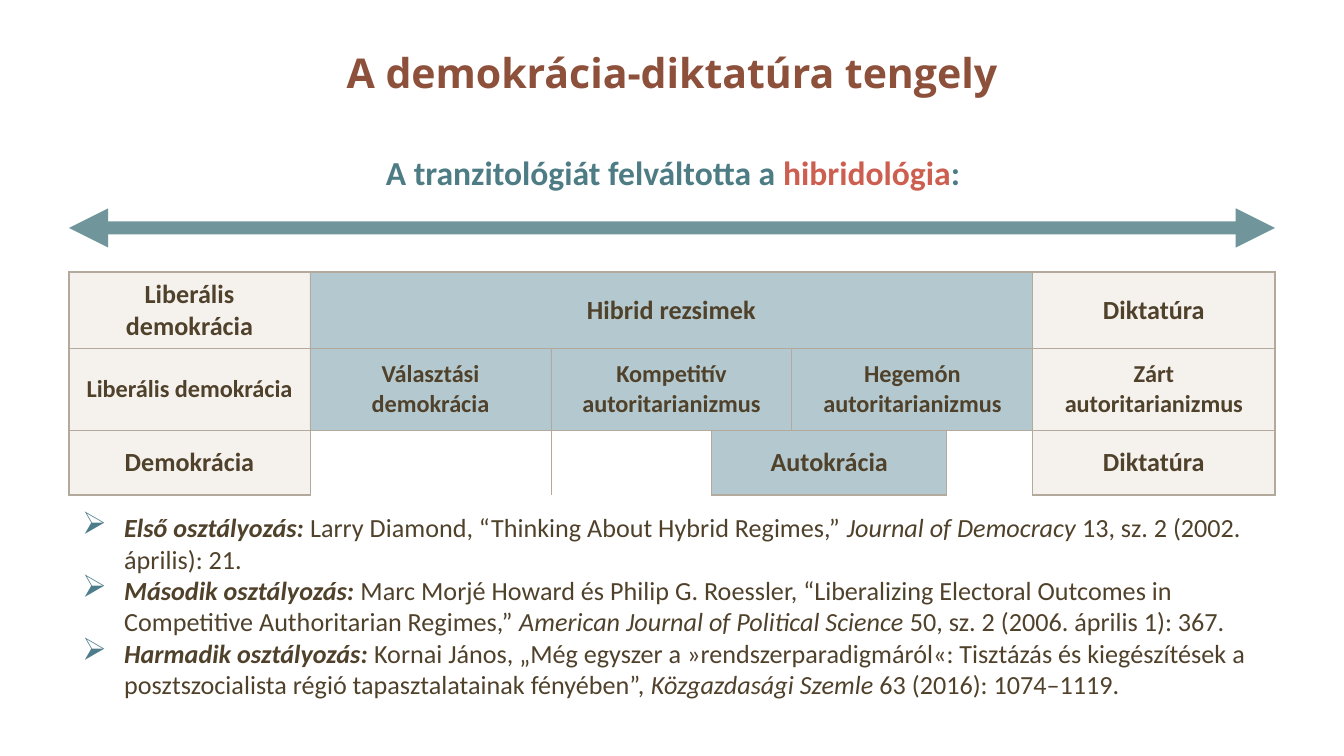
from lxml import etree
from pptx import Presentation, util as u
from pptx.dml.color import RGBColor
from pptx.enum import shapes, text
from pptx.oxml import ns

PX = 914400 / 134.4
BROWN, TEAL, RED, DARK = "8D503B", "4D7C84", "CD5F50", "50412B"
SAND, BLUE, BORDER, BULLET = "EFEAE4", "6B95A1", "B3A99D", "4D7C8B"
NO_STYLE = "{2D5ABB26-0587-4C30-8999-92F81FD0307C}"

COLS = [241, 241, 161, 80, 155, 86, 242]
ROWS = [69, 82, 65]
# row, column, columns spanned, wording, size, fill, opacity
REGIMES = [
    (0, 0, 1, "Liberális demokrácia", 14, SAND, 60),
    (0, 1, 5, "Hibrid rezsimek", 14, BLUE, 50),
    (0, 6, 1, "Diktatúra", 14, SAND, 60),
    (1, 0, 1, "Liberális demokrácia", 13, SAND, 60),
    (1, 1, 1, "Választási demokrácia", 13, BLUE, 50),
    (1, 2, 2, "Kompetitív autoritarianizmus", 13, BLUE, 50),
    (1, 4, 2, "Hegemón autoritarianizmus", 13, BLUE, 50),
    (1, 6, 1, "Zárt autoritarianizmus", 13, SAND, 60),
    (2, 0, 1, "Demokrácia", 14, SAND, 60),
    (2, 3, 2, "Autokrácia", 14, BLUE, 50),
    (2, 6, 1, "Diktatúra", 14, SAND, 60),
]
GAPS = [(2, 1, "LT"), (2, 2, "RT"), (2, 5, "LRT")]
# lead-in, citation, journal, issue
SOURCES = [
    ("Első osztályozás: ", "Larry Diamond, “Thinking About Hybrid Regimes,” ",
     "Journal of Democracy ", "13, sz. 2 (2002. április): 21."),
    ("Második osztályozás:",
     " Marc Morjé Howard és Philip G. Roessler, “Liberalizing Electoral Outcomes "
     "in Competitive Authoritarian Regimes,” ",
     "American Journal of Political Science ", "50, sz. 2 (2006. április 1): 367."),
    ("Harmadik osztályozás:",
     " Kornai János, „Még egyszer a »rendszerparadigmáról«: Tisztázás és "
     "kiegészítések a posztszocialista régió tapasztalatainak fényében”, ",
     "Közgazdasági Szemle ", "63 (2016): 1074–1119."),
]


def px(n):
    return u.Emu(round(n * PX))


def rgb(value):
    return RGBColor.from_string(value)


def add(parent, tag, **attrs):
    """Append an element of the drawing namespace."""
    return etree.SubElement(parent, ns.qn("a:" + tag), attrs)


def set_alpha(fill, percent):
    color = fill._xPr.find(".//" + ns.qn("a:srgbClr"))
    add(color, "alpha", val=str(percent * 1000))


def style(p, size, color, name="Calibri", bold=None):
    p.font.size, p.font.name, p.font.bold = u.Pt(size), name, bold
    p.font.color.rgb = rgb(color)


def add_text_frame(s, x, y, w, h):
    tf = s.shapes.add_textbox(px(x), px(y), px(w), px(h)).text_frame
    tf.word_wrap = True
    return tf


def add_title(s, x, y, w, h):
    tf = add_text_frame(s, x, y, w, h)
    tf.vertical_anchor = text.MSO_ANCHOR.MIDDLE
    p = tf.paragraphs[0]
    p.text, p.alignment = "A demokrácia-diktatúra tengely", text.PP_ALIGN.CENTER
    style(p, 22, BROWN, "Open Sans", True)


def add_subtitle(s, x, y, w, h):
    p = add_text_frame(s, x, y, w, h).paragraphs[0]
    p.alignment = text.PP_ALIGN.CENTER
    style(p, 18, TEAL, bold=True)
    for words, color in [("A tranzitológiát felváltotta a ", TEAL),
                         ("hibridológia", RED), (":", TEAL)]:
        r = p.add_run()
        r.text = words
        r.font.color.rgb = rgb(color)


def add_axis(s, x, y, w):
    """Draw the thick two-headed arrow."""
    c = s.shapes.add_connector(shapes.MSO_CONNECTOR.STRAIGHT,
                               px(x), px(y), px(x + w), px(y))
    c.line.width = u.Pt(7)
    c.line.color.rgb = rgb(TEAL)
    set_alpha(c.line.fill, 80)
    ln = c.line._get_or_add_ln()
    add(ln, "headEnd", type="triangle")
    add(ln, "tailEnd", type="triangle")
    add(c._element.spPr, "effectLst")


def set_borders(cell, widths):
    """Put borders, given as side to points, ahead of the cell's fill."""
    tc_pr = cell._tc.get_or_add_tcPr()
    for i, (side, points) in enumerate(widths.items()):
        ln = add(tc_pr, "ln" + side, w=str(u.Pt(points)))
        add(add(ln, "solidFill"), "srgbClr", val=BORDER)
        tc_pr.insert(i, ln)


def add_regime_table(s, x, y):
    frame = s.shapes.add_table(len(ROWS), len(COLS), px(x), px(y),
                               px(sum(COLS)), px(sum(ROWS)))
    table = frame.table
    table._tbl.tblPr.find(ns.qn("a:tableStyleId")).text = NO_STYLE
    table.first_row = table.horz_banding = False
    for column, w in zip(table.columns, COLS):
        column.width = px(w)
    for row, h in zip(table.rows, ROWS):
        row.height = px(h)

    for r, c, span, words, size, color, opacity in REGIMES:
        cell = table.cell(r, c)
        if span > 1:
            cell.merge(table.cell(r, c + span - 1))
        cell.vertical_anchor = text.MSO_ANCHOR.MIDDLE
        cell.fill.solid()
        cell.fill.fore_color.rgb = rgb(color)
        set_alpha(cell.fill, opacity)
        outer = {"L": c == 0, "R": c + span == len(COLS),
                 "T": r == 0, "B": r == len(ROWS) - 1}
        set_borders(cell, {side: 1 if edge else 0.5 for side, edge in outer.items()})
        p = cell.text_frame.paragraphs[0]
        p.text, p.alignment = words, text.PP_ALIGN.CENTER
        style(p, size, DARK, bold=True)

    for r, c, sides in GAPS:
        cell = table.cell(r, c)
        cell.fill.background()
        set_borders(cell, {side: 0.5 for side in sides})


def add_sources(s, x, y, w, h):
    tf = add_text_frame(s, x, y, w, h)
    for i, parts in enumerate(SOURCES):
        p = tf.add_paragraph() if i else tf.paragraphs[0]
        p_pr = p._p.get_or_add_pPr()
        p_pr.set("marL", str(px(42)))
        p_pr.set("indent", str(px(-42)))
        add(add(p_pr, "buClr"), "srgbClr", val=BULLET)
        add(p_pr, "buSzPct", val="120000")
        add(p_pr, "buChar", char="➢")
        style(p, 14, DARK)
        for k, words in enumerate(parts):
            r = p.add_run()
            r.text = words
            r.font.bold, r.font.italic = k == 0, k in (0, 2)


def main():
    prs = Presentation()
    prs.slide_width, prs.slide_height = px(1344), px(756)
    s = prs.slides.add_slide(prs.slide_layouts[6])
    add_title(s, 16, 0, 1312, 145)
    add_sources(s, 69, 505, 1206, 203)
    add_axis(s, 69, 228, 1206)
    add_subtitle(s, 17, 145, 1312, 54)
    add_regime_table(s, 69, 272)
    prs.save("out.pptx")


if __name__ == "__main__":
    main()
